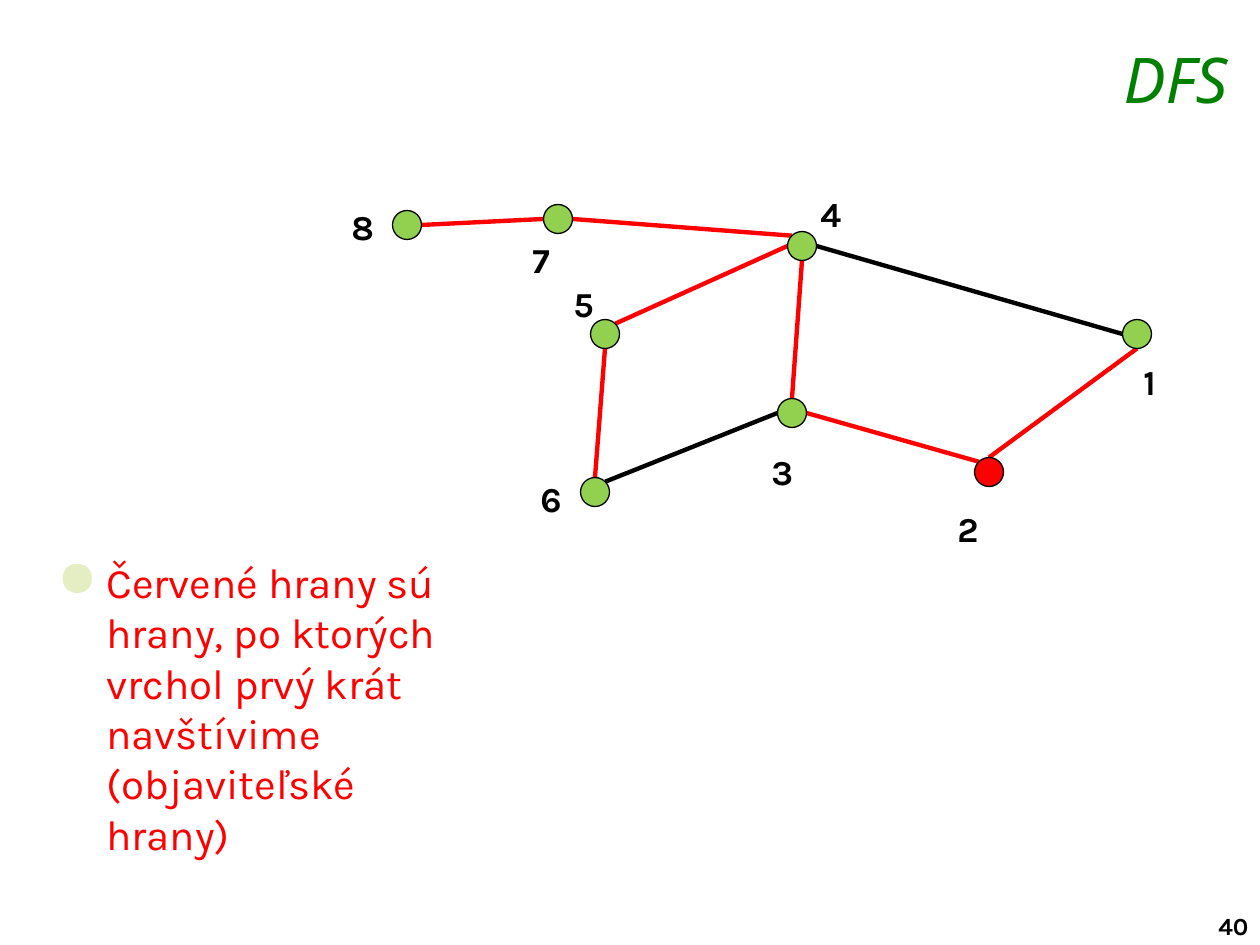
import pptx
import pptx.util
import pptx.dml.color
import pptx.enum.shapes
import pptx.enum.text
import lxml.etree

TITLE = "DFS"
NOTE = ("Červené hrany sú hrany, po ktorých vrchol prvý krát navštívime "
        "(objaviteľské hrany)")
PAGE = "40"
HEX = {"green": "92D050", "red": "FF0000", "black": "000000",
       "title": "008000", "bullet": "E5EEC2"}

# name: (centre, label corner, fill)
NODES = {
    "1": ((1137, 334), (1131, 354), "green"),
    "2": ((989, 472), (945, 501), "red"),
    "3": ((792, 413), (759, 444), "green"),
    "4": ((802, 246), (808, 186), "green"),
    "5": ((605, 334), (561, 276), "green"),
    "6": ((595, 492), (528, 471), "green"),
    "7": ((558, 219), (520, 232), "green"),
    "8": ((407, 225), (339, 199), "green"),
}
# node, side of node, node, side of node, colour
EDGES = [
    ("5", "NE", "4", "W", "red"), ("4", "E", "1", "W", "black"),
    ("3", "N", "4", "S", "red"), ("2", "N", "1", "S", "red"),
    ("3", "E", "2", "NW", "red"), ("6", "N", "5", "S", "red"),
    ("6", "NE", "3", "W", "black"), ("7", "E", "4", "NW", "red"),
    ("8", "E", "7", "W", "red"),
]
SIDES = {"N": (0, -1), "S": (0, 1), "W": (-1, 0), "E": (1, 0),
         "NE": (0.71, -0.71), "NW": (-0.71, -0.71)}
SIZE = 29
A = "http://schemas.openxmlformats.org/drawingml/2006/main"


def px(num):
    return round(num * 914400 / 126)


def rgb(name):
    return pptx.dml.color.RGBColor.from_string(HEX[name])


def add(node, tag, **attrs):
    return lxml.etree.SubElement(node, f"{{{A}}}{tag}", attrs)


def write(shape, text, size, color="black", font="Karla", bold=False,
          italic=False, wrap=True, align="LEFT", bullet=False):
    frame = shape.text_frame
    frame.word_wrap = wrap
    frame.vertical_anchor = pptx.enum.text.MSO_ANCHOR.TOP
    para = frame.paragraphs[0]
    para.alignment = pptx.enum.text.PP_ALIGN[align]
    if bullet:
        props = para._p.get_or_add_pPr()
        props.set("marL", str(px(49)))
        props.set("indent", str(px(-49)))
        add(add(props, "buClr"), "srgbClr", val=HEX["bullet"])
        add(props, "buSzPct", val="120000")
        add(props, "buChar", char="●")
    run = para.add_run()
    run.text = text
    run.font.name = font
    run.font.size = pptx.util.Pt(size)
    run.font.bold = bold
    run.font.italic = italic
    run.font.color.rgb = rgb(color)


def box(x, y, w, h):
    return slide.shapes.add_textbox(px(x), px(y), px(w), px(h))


def port(name, side):
    """Point on the rim of a node."""
    (x, y), (dx, dy) = NODES[name][0], SIDES[side]
    return px(x + dx * SIZE / 2), px(y + dy * SIZE / 2)


deck = pptx.Presentation()
deck.slide_width, deck.slide_height = px(1260), px(945)
slide = deck.slides.add_slide(deck.slide_layouts[5])

title = slide.shapes.title
title.left, title.top, title.width, title.height = map(px, (289, 39, 951, 73))
title.text_frame.auto_size = pptx.enum.text.MSO_AUTO_SIZE.NONE
title.text_frame.margin_top = px(2)
write(title, TITLE, 36, "title", "Noto Sans", italic=True, align="RIGHT")

write(box(45, 550, 456, 321), NOTE, 24, "red", bullet=True)
write(box(1206, 905, 64, 42), PAGE, 14, bold=True)

for start, out, end, into, color in EDGES:
    edge = slide.shapes.add_connector(
        pptx.enum.shapes.MSO_CONNECTOR.STRAIGHT,
        *port(start, out), *port(end, into))
    edge.line.color.rgb = rgb(color)
    edge.line.width = pptx.util.Pt(2.5)
    add(edge._element.spPr, "effectLst")

for name, ((x, y), spot, color) in NODES.items():
    dot = slide.shapes.add_shape(
        pptx.enum.shapes.MSO_SHAPE.OVAL,
        px(x - SIZE / 2), px(y - SIZE / 2), px(SIZE), px(SIZE))
    dot.shadow.inherit = False
    dot.fill.solid()
    dot.fill.fore_color.rgb = rgb(color)
    dot.line.color.rgb = rgb("black")
    dot.line.width = pptx.util.Pt(0.75)
    write(box(*spot, 47, 55), name, 20, bold=True, wrap=False)

deck.save("out.pptx")
